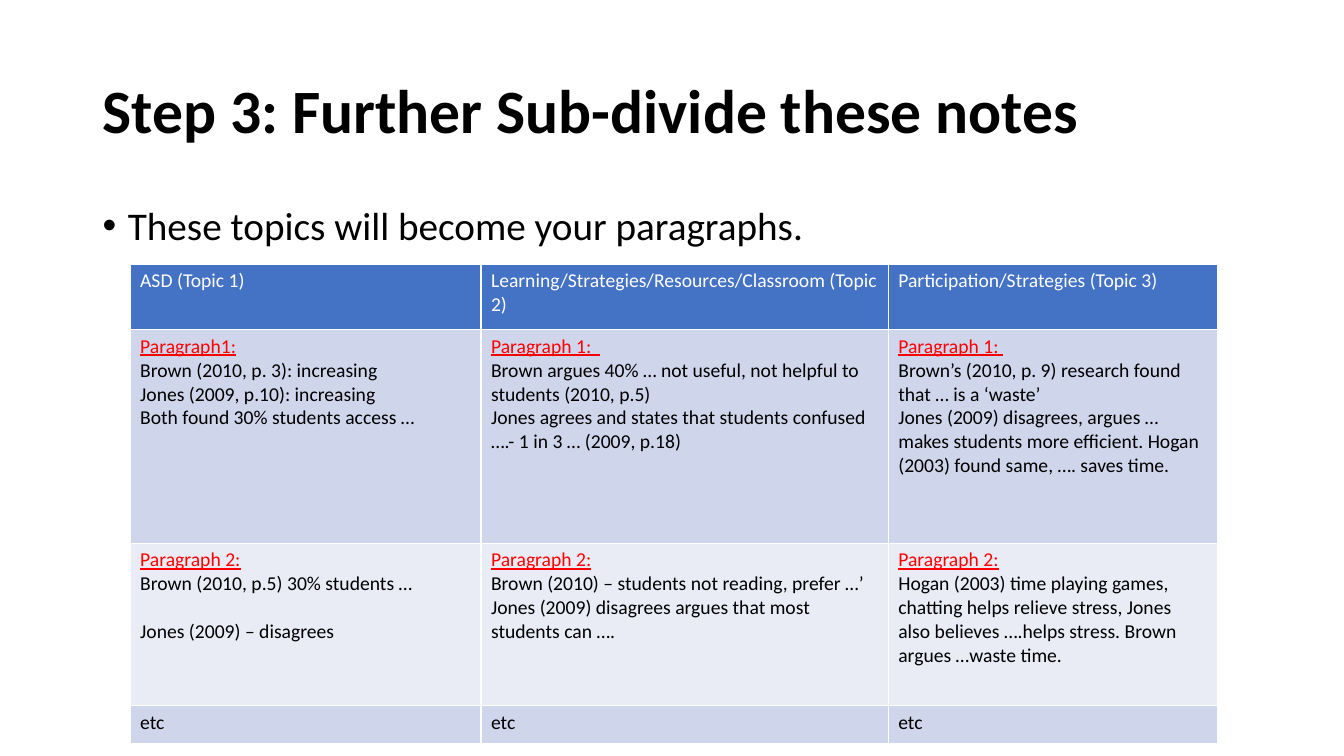
from dataclasses import dataclass
from lxml.etree import SubElement
from pptx import Presentation
from pptx.dml.color import RGBColor
from pptx.enum.text import MSO_ANCHOR, MSO_AUTO_SIZE, PP_ALIGN
from pptx.oxml.ns import qn
from pptx.util import Inches, Pt


@dataclass(frozen=True)
class Theme:
    font: str = "Calibri"
    title: int = 44
    body: int = 28
    cell: int = 14
    ink: str = "000000"
    paper: str = "FFFFFF"
    head: str = "4472C4"
    label: str = "FF0000"
    bands: tuple = ("CFD5EA", "E9EBF5")


THEME = Theme()
WIDE, HIGH = 13.33, 7.5
LEFT, SPAN = 0.92, 11.5
COLS = (3.48, 4.04, 3.27)
ROWS = (0.65, 2.12, 1.61, 0.38)
GAP = Pt(17)

HEADS = (
    "ASD (Topic 1)",
    "Learning/Strategies/Resources/Classroom (Topic 2)",
    "Participation/Strategies (Topic 3)",
)
NOTES = (
    (
        ("Paragraph1:", "Brown (2010, p. 3): increasing",
         "Jones (2009, p.10): increasing", "Both found 30% students access …"),
        ("Paragraph 1:  ",
         "Brown argues 40% … not useful, not helpful to students (2010, p.5)",
         "Jones agrees and states that students confused ….- 1 in 3 … (2009, p.18)"),
        ("Paragraph 1: ",
         "Brown’s (2010, p. 9) research found that … is a ‘waste’",
         "Jones (2009) disagrees, argues … makes students more efficient. "
         "Hogan (2003) found same, …. saves time."),
    ),
    (
        ("Paragraph 2:", "Brown (2010, p.5) 30% students …",
         "Jones (2009) – disagrees"),
        ("Paragraph 2:",
         "Brown (2010) – students not reading, prefer …’ "
         "Jones (2009) disagrees argues that most students can …."),
        ("Paragraph 2:",
         "Hogan (2003) time playing games, chatting helps relieve stress, "
         "Jones also believes ….helps stress. Brown argues …waste time."),
    ),
)


def style(item, values):
    for name, value in values.items():
        setattr(item, name, value)


def place(shape, *box):
    style(shape, dict(zip(("left", "top", "width", "height"), map(Inches, box))))


def write(para, text, size, color, **more):
    run = para.add_run()
    run.text = text
    style(run.font, {"name": THEME.font, "size": Pt(size), **more})
    run.font.color.rgb = RGBColor.from_string(color)


def add_title(slide, text):
    shape = slide.shapes.title
    place(shape, LEFT, 0.4, SPAN, 1.45)
    frame = shape.text_frame
    style(frame, {"word_wrap": True, "auto_size": MSO_AUTO_SIZE.NONE,
                  "vertical_anchor": MSO_ANCHOR.MIDDLE})
    para = frame.paragraphs[0]
    style(para, {"alignment": PP_ALIGN.LEFT, "line_spacing": 0.9})
    write(para, text, THEME.title, THEME.ink, bold=True)


def add_bullet(slide, text):
    box = slide.shapes.add_textbox(0, 0, 0, 0)
    place(box, LEFT, 2, SPAN, 0.6)
    box.text_frame.word_wrap = True
    para = box.text_frame.paragraphs[0]
    style(para, {"line_spacing": 0.9, "space_before": Pt(10)})
    props = para._p.get_or_add_pPr()
    props.set("marL", str(Inches(0.25)))
    props.set("indent", str(-Inches(0.25)))
    SubElement(props, qn("a:buFont")).set("typeface", "Arial")
    SubElement(props, qn("a:buChar")).set("char", "•")
    write(para, text, THEME.body, THEME.ink)


def edge(cell):
    props = cell._tc.get_or_add_tcPr()
    for side in ("lnL", "lnR", "lnT", "lnB"):
        line = SubElement(props, qn(f"a:{side}"), w=str(Pt(1)))
        fill = SubElement(line, qn("a:solidFill"))
        SubElement(fill, qn("a:srgbClr"), val=THEME.paper)


def fill_cell(cell, lines, back, color):
    edge(cell)
    cell.fill.solid()
    cell.fill.fore_color.rgb = RGBColor.from_string(back)
    frame = cell.text_frame
    for index, line in enumerate(lines):
        para = frame.add_paragraph() if index else frame.paragraphs[0]
        para.font.bold = False
        if index == 0 and len(lines) > 1:
            write(para, line, THEME.cell, THEME.label, bold=False, underline=True)
        else:
            write(para, line, THEME.cell, color, bold=False)


def add_grid(slide):
    box = map(Inches, (1.29, 2.62, sum(COLS), sum(ROWS)))
    table = slide.shapes.add_table(len(ROWS), len(COLS), *box).table
    for col, width in zip(table.columns, COLS):
        col.width = Inches(width)
    for row, height in zip(table.rows, ROWS):
        row.height = Inches(height)
    rows = ([(text,) for text in HEADS], *NOTES, [("etc",)] * len(COLS))
    for r, row in enumerate(rows):
        back = THEME.bands[(r - 1) % 2] if r else THEME.head
        color = THEME.ink if r else THEME.paper
        for c, lines in enumerate(row):
            fill_cell(table.cell(r, c), lines, back, color)
    table.cell(2, 0).text_frame.paragraphs[-1].space_before = GAP


def main():
    deck = Presentation()
    style(deck, {"slide_width": Inches(WIDE), "slide_height": Inches(HIGH)})
    slide = deck.slides.add_slide(deck.slide_layouts[5])
    add_title(slide, "Step 3: Further Sub-divide these notes")
    add_bullet(slide, "These topics will become your paragraphs.")
    add_grid(slide)
    deck.save("out.pptx")


if __name__ == "__main__":
    main()
